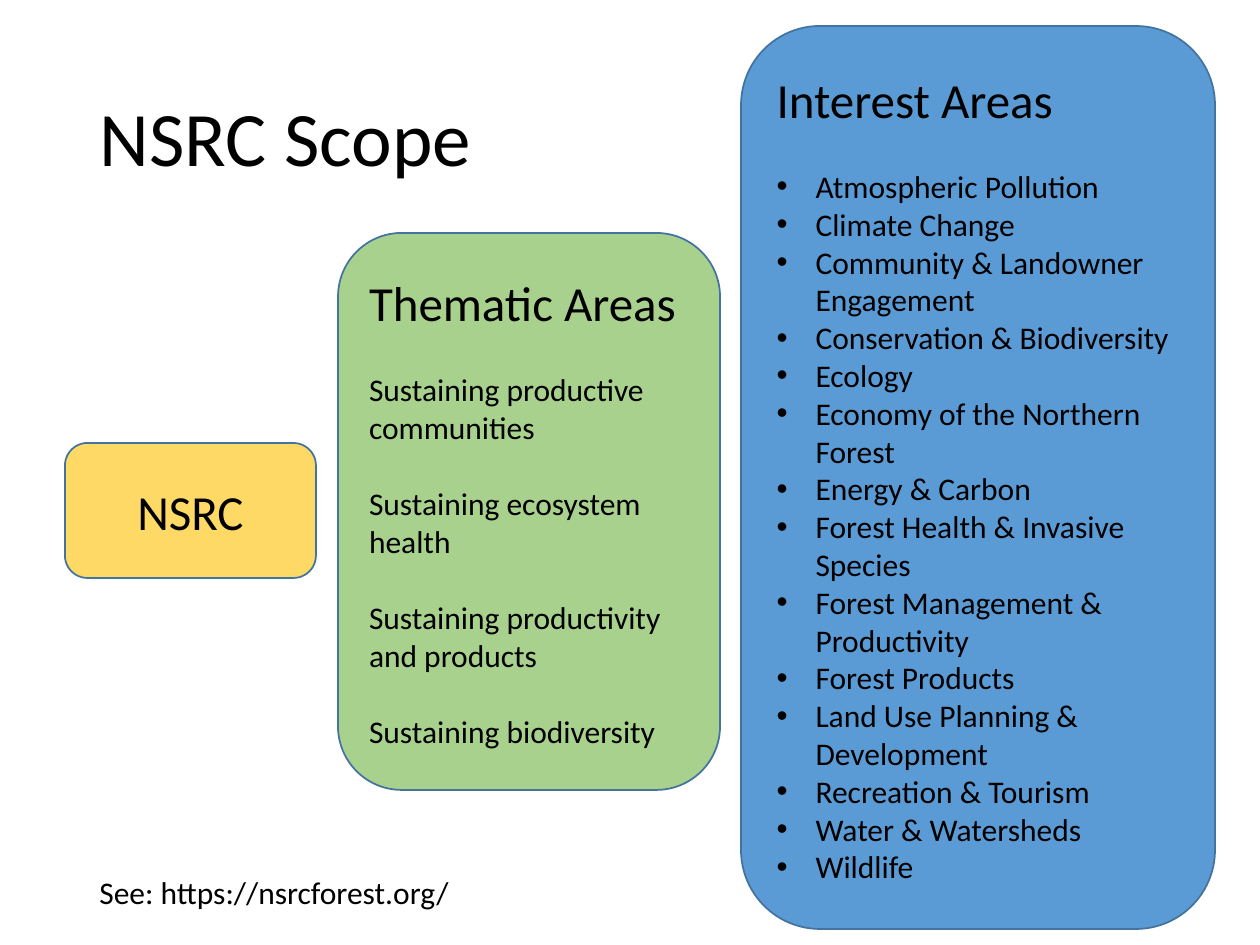
from lxml.etree import SubElement
from pptx import Presentation
from pptx.dml.color import RGBColor
from pptx.enum.shapes import MSO_SHAPE as Shape
from pptx.enum.text import MSO_ANCHOR as Anchor, MSO_AUTO_SIZE as AutoSize, PP_ALIGN as Align
from pptx.oxml.ns import qn
from pptx.util import Pt

EMU_PER_PX = 914400 / 126
COLORS = {
    "text": "000000", "border": "43739E",
    "interest": "5B9BD5", "thematic": "A9D18E", "nsrc": "FFD966",
}
HEADING, BODY = 28, 18
BLANK_LINE = 22
BULLET_INDENT = 39

THEMES = [
    "Sustaining productive communities",
    "Sustaining ecosystem health",
    "Sustaining productivity and products",
    "Sustaining biodiversity",
]
INTERESTS = [
    "Atmospheric Pollution",
    "Climate Change",
    "Community & Landowner Engagement",
    "Conservation & Biodiversity",
    "Ecology",
    "Economy of the Northern Forest",
    "Energy & Carbon",
    "Forest Health & Invasive Species",
    "Forest Management & Productivity",
    "Forest Products",
    "Land Use Planning & Development",
    "Recreation & Tourism",
    "Water & Watersheds",
    "Wildlife",
]


def px(n):
    return round(n * EMU_PER_PX)


def rgb(name):
    return RGBColor.from_string(COLORS[name])


class Deck:
    """Holds the text style and the current slide."""

    def __init__(self, slide, font="Calibri"):
        self.slide = slide
        self.font = font

    def style(self, p, size, align=Align.LEFT):
        p.alignment = align
        for r in p.runs:
            r.font.name = self.font
            r.font.size = Pt(size)
            r.font.color.rgb = rgb("text")

    def title(self, text, x, y, w, h):
        sp = self.slide.shapes.title
        sp.left, sp.top, sp.width, sp.height = map(px, (x, y, w, h))
        tf = sp.text_frame
        tf.text = text
        tf.auto_size = AutoSize.NONE
        tf.vertical_anchor = Anchor.MIDDLE
        p = tf.paragraphs[0]
        p.line_spacing = 0.9
        self.style(p, 44)

    def panel(self, heading, x, y, w, h, fill, align=Align.LEFT):
        sp = self.slide.shapes.add_shape(Shape.ROUNDED_RECTANGLE, *map(px, (x, y, w, h)))
        sp.shadow.inherit = False
        sp.fill.solid()
        sp.fill.fore_color.rgb = rgb(fill)
        sp.line.color.rgb = rgb("border")
        sp.line.width = Pt(1)
        tf = sp.text_frame
        tf.word_wrap = True
        tf.vertical_anchor = Anchor.MIDDLE
        tf.text = heading
        self.style(tf.paragraphs[0], HEADING, align)
        return tf

    def items(self, tf, texts, gap=0, bullets=False):
        """Add one paragraph per text, a blank line's height below the heading."""
        for i, text in enumerate(texts):
            p = tf.add_paragraph()
            p.text = text
            p.space_before = Pt(gap if i else BLANK_LINE)
            self.style(p, BODY)
            if bullets:
                self.bullet(p)

    def bullet(self, p):
        pPr = p._p.get_or_add_pPr()
        pPr.set("marL", str(px(BULLET_INDENT)))
        pPr.set("indent", str(-px(BULLET_INDENT)))
        SubElement(pPr, qn("a:buFont")).set("typeface", "Arial")
        SubElement(pPr, qn("a:buChar")).set("char", "•")

    def note(self, text, x, y, w, h):
        sp = self.slide.shapes.add_textbox(*map(px, (x, y, w, h)))
        tf = sp.text_frame
        tf.word_wrap = False
        tf.auto_size = AutoSize.SHAPE_TO_FIT_TEXT
        tf.text = text
        self.style(tf.paragraphs[0], BODY)


def main():
    prs = Presentation()
    prs.slide_width, prs.slide_height = px(1260), px(945)
    title_only = prs.slide_layouts[5]
    deck = Deck(prs.slides.add_slide(title_only))

    deck.title("NSRC Scope", 87, 50, 501, 183)
    interest = deck.panel("Interest Areas", 741, 26, 474, 903, "interest")
    deck.items(interest, INTERESTS, bullets=True)
    thematic = deck.panel("Thematic Areas", 338, 233, 382, 557, "thematic")
    deck.items(thematic, THEMES, gap=BLANK_LINE)
    deck.panel("NSRC", 65, 443, 251, 135, "nsrc", Align.CENTER)
    deck.note("See: https://nsrcforest.org/", 87, 867, 379, 50)

    prs.save("out.pptx")


if __name__ == "__main__":
    main()
